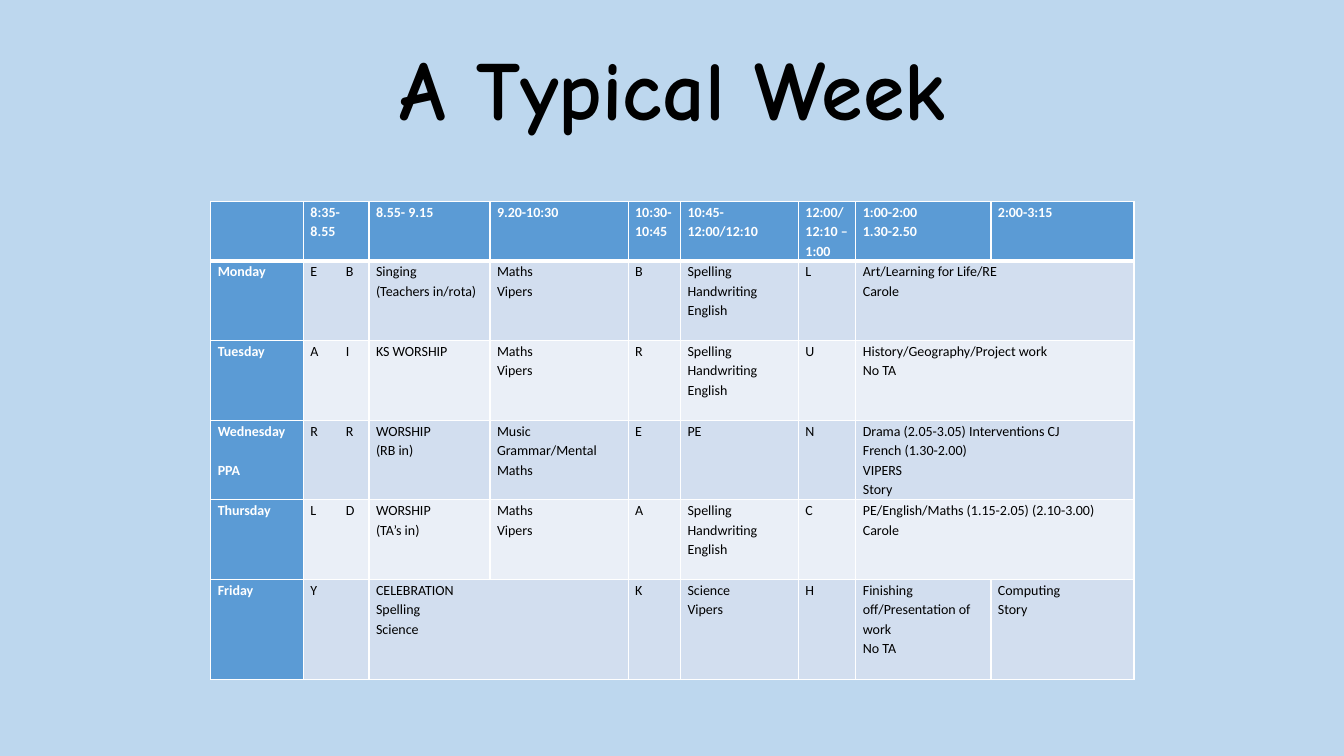
from lxml import etree
from pptx import Presentation
from pptx import util as u
from pptx.dml.color import RGBColor
from pptx.enum import text
from pptx.oxml import ns

TITLE = "A Typical Week"
JOIN_LEFT = None
TIMETABLE = [
    ["", "8:35-8.55", "8.55- 9.15", "9.20-10:30", "10:30-10:45", "10:45-12:00/12:10",
     "12:00/\n12:10 – 1:00", "1:00-2:00\n1.30-2.50", "2:00-3:15"],
    ["Monday", "E\tB", "Singing\n(Teachers in/rota)", "Maths\nVipers", "B",
     "Spelling\nHandwriting\nEnglish", "L", "Art/Learning for Life/RE\nCarole", JOIN_LEFT],
    ["Tuesday", "A\tI", "KS WORSHIP", "Maths\nVipers", "R",
     "Spelling\nHandwriting\nEnglish", "U", "History/Geography/Project work\nNo TA", JOIN_LEFT],
    ["Wednesday\nPPA", "R\tR", "WORSHIP\n(RB in)", "Music\nGrammar/Mental Maths", "E", "PE", "N",
     "Drama (2.05-3.05) Interventions CJ\nFrench (1.30-2.00)\nVIPERS\nStory", JOIN_LEFT],
    ["Thursday", "L\tD", "WORSHIP\n(TA’s in)", "Maths\nVipers", "A",
     "Spelling\nHandwriting\nEnglish", "C",
     "PE/English/Maths (1.15-2.05) (2.10-3.00)\nCarole", JOIN_LEFT],
    ["Friday", "Y", "CELEBRATION\nSpelling\nScience", JOIN_LEFT, "K", "Science\nVipers", "H",
     "Finishing off/Presentation of work\nNo TA", "Computing\nStory"],
]
COLUMN_WIDTHS = [0.92, 0.65, 1.2, 1.37, 0.52, 1.17, 0.57, 1.34, 1.42]
ROW_HEIGHTS = [0.59] + [0.79] * 4 + [0.99]
TABLE_TOP = 2
SECOND_LETTER_TAB = 0.35

SKY = RGBColor(0xBD, 0xD7, 0xEE)
BLUE = RGBColor(0x5B, 0x9B, 0xD5)
BANDS = [RGBColor(0xEA, 0xEF, 0xF7), RGBColor(0xD2, 0xDE, 0xEF)]
WHITE = RGBColor(0xFF, 0xFF, 0xFF)
BLACK = RGBColor(0, 0, 0)


def style_paragraph(paragraph, font_name, size, color, bold, line_spacing):
    paragraph.line_spacing = line_spacing
    for run in paragraph.runs:
        run.font.name = font_name
        run.font.size = u.Pt(size)
        run.font.bold = bold
        run.font.color.rgb = color


def add_tab_stop(paragraph, inches):
    properties = paragraph._p.get_or_add_pPr()
    tabs = etree.SubElement(properties, ns.qn("a:tabLst"))
    etree.SubElement(tabs, ns.qn("a:tab"), pos=str(u.Inches(inches)), algn="l")


def set_borders(cell, row):
    properties = cell._tc.get_or_add_tcPr()
    widths = {"L": 1, "R": 1, "T": 3 if row == 1 else 1, "B": 3 if row == 0 else 1}
    for side, width in widths.items():
        line = etree.SubElement(properties, ns.qn("a:ln" + side), w=str(u.Pt(width)))
        fill = etree.SubElement(line, ns.qn("a:solidFill"))
        etree.SubElement(fill, ns.qn("a:srgbClr"), val=str(WHITE))


def fill_cell(cell, content, row, column):
    heading = row == 0 or column == 0
    cell.margin_left = cell.margin_right = u.Inches(0.07)
    cell.margin_top = cell.margin_bottom = 0
    set_borders(cell, row)
    cell.fill.solid()
    cell.fill.fore_color.rgb = BLUE if heading else BANDS[row % 2]
    if not content:
        return
    cell.text_frame.text = content
    for index, paragraph in enumerate(cell.text_frame.paragraphs):
        style_paragraph(paragraph, "Calibri", 10, WHITE if heading else BLACK, heading, 1.15)
        if column == 0 and index:
            paragraph.space_before = u.Pt(14)
        if "\t" in content:
            add_tab_stop(paragraph, SECOND_LETTER_TAB)


presentation = Presentation()
presentation.slide_width = u.Inches(13.33)
presentation.slide_height = u.Inches(7.5)
slide = presentation.slides.add_slide(presentation.slide_layouts[6])
slide.background.fill.solid()
slide.background.fill.fore_color.rgb = SKY

title = slide.shapes.add_textbox(u.Inches(0.92), u.Inches(0.2), u.Inches(11.5), u.Inches(1.45))
title.text_frame.word_wrap = True
title.text_frame.vertical_anchor = text.MSO_ANCHOR.MIDDLE
title.text_frame.text = TITLE
title_paragraph = title.text_frame.paragraphs[0]
title_paragraph.alignment = text.PP_ALIGN.CENTER
style_paragraph(title_paragraph, "Comic Neue", 60, BLACK, True, 0.9)

table_width = sum(COLUMN_WIDTHS)
table = slide.shapes.add_table(
    len(ROW_HEIGHTS), len(COLUMN_WIDTHS), u.Inches(2.09), u.Inches(TABLE_TOP),
    u.Inches(table_width), u.Inches(sum(ROW_HEIGHTS))).table
for table_column, width in zip(table.columns, COLUMN_WIDTHS):
    table_column.width = u.Inches(width)
for table_row, height in zip(table.rows, ROW_HEIGHTS):
    table_row.height = u.Inches(height)
for row, contents in enumerate(TIMETABLE):
    for column, content in enumerate(contents):
        fill_cell(table.cell(row, column), content, row, column)
        if content is JOIN_LEFT:
            table.cell(row, column - 1).merge(table.cell(row, column))

presentation.save("out.pptx")
